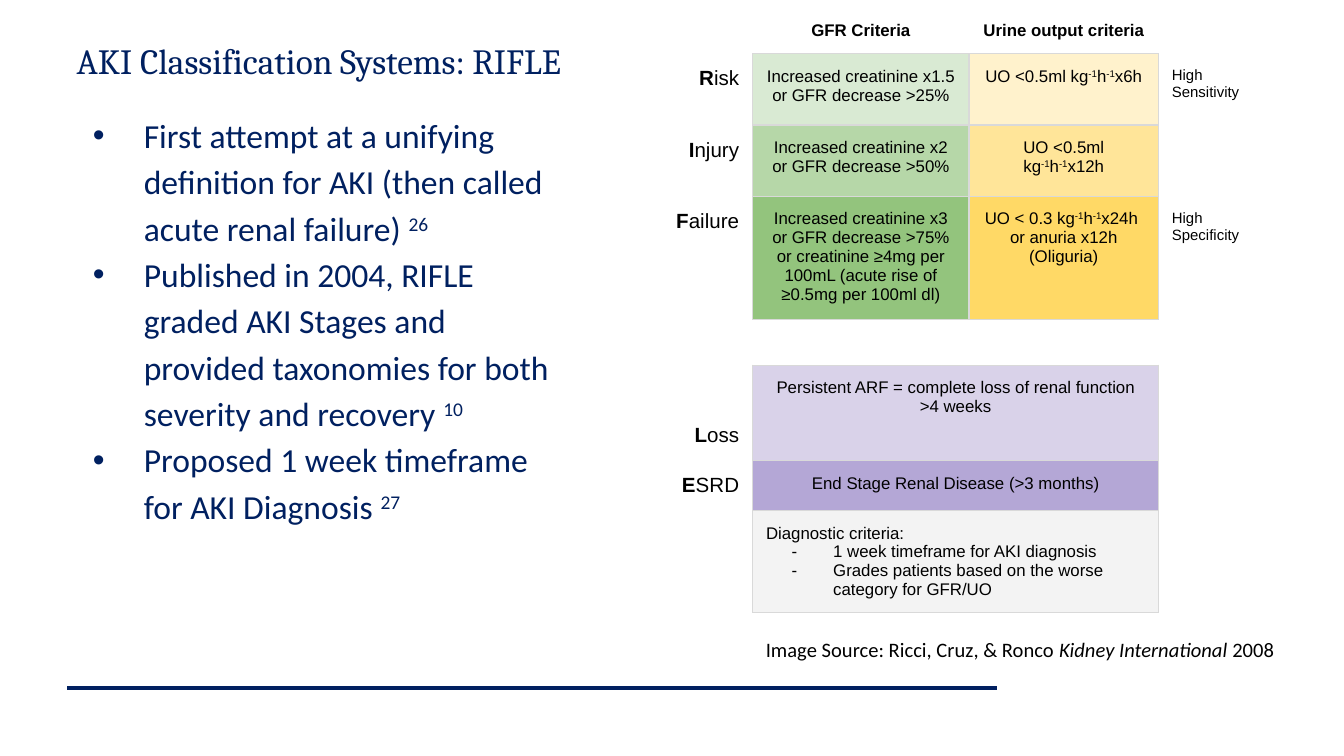
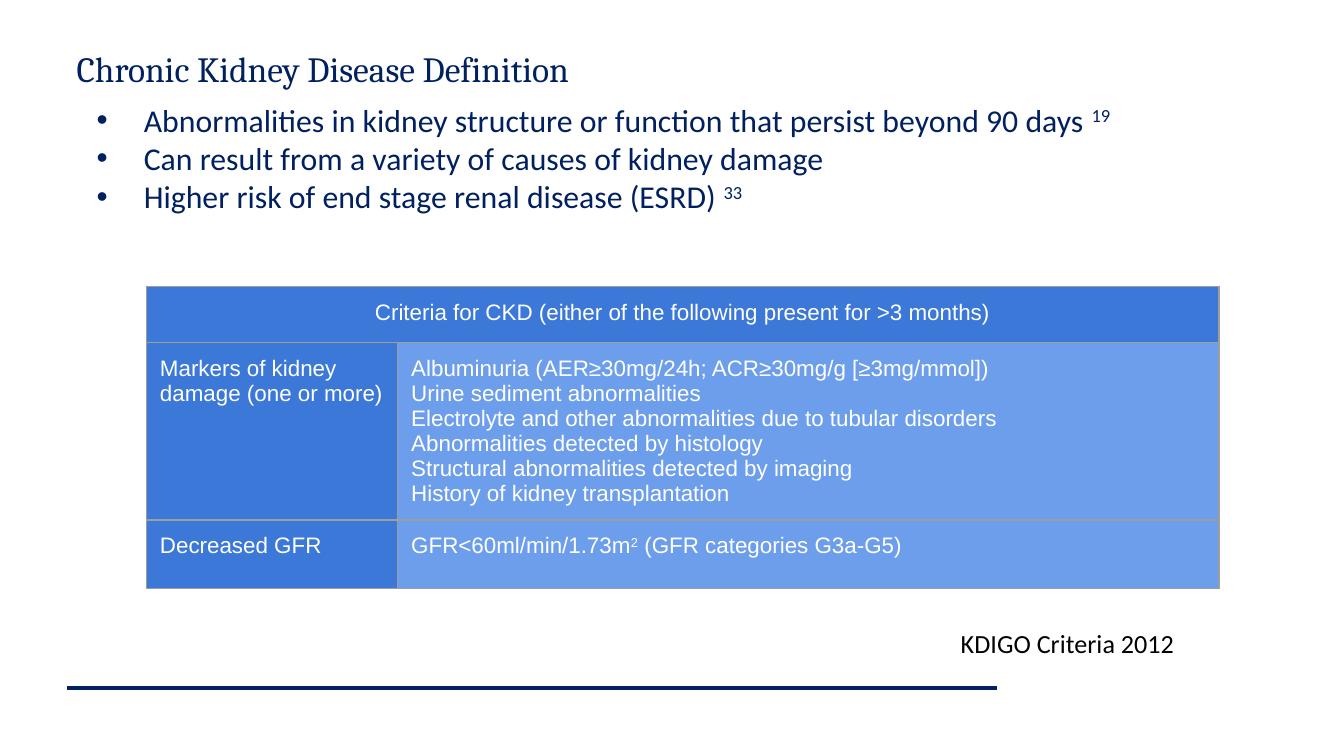
from itertools import product

from lxml.etree import SubElement
from pptx import Presentation
from pptx.dml.color import RGBColor as Color
from pptx.enum.shapes import MSO_CONNECTOR as Connector
from pptx.enum.text import MSO_ANCHOR as Anchor, MSO_AUTO_SIZE as AutoSize, PP_ALIGN as Align
from pptx.oxml.ns import qn
from pptx.util import Inches, Pt

NAVY = Color(0x00, 0x20, 0x60)
BLACK = Color(0x00, 0x00, 0x00)
WHITE = Color(0xFF, 0xFF, 0xFF)
LIGHT_GRAY = Color(0xD9, 0xD9, 0xD9)
MID_GRAY = Color(0x9E, 0x9E, 0x9E)
PALE_GRAY = Color(0xF3, 0xF3, 0xF3)
GREENS = [Color(0xD9, 0xEA, 0xD3), Color(0xB6, 0xD7, 0xA8), Color(0x93, 0xC4, 0x7D)]
GOLDS = [Color(0xFF, 0xF2, 0xCC), Color(0xFF, 0xE5, 0x99), Color(0xFF, 0xD9, 0x66)]
LILAC = Color(0xD9, 0xD2, 0xE9)
PURPLE = Color(0xB4, 0xA7, 0xD6)
BLUE = Color(0x3C, 0x78, 0xD8)
SKY = Color(0x6D, 0x9E, 0xEB)

TITLE_FONT, BODY_FONT, TABLE_FONT = "Cambria", "Calibri", "Arial"
PLAIN_TABLE_STYLE = "{2D5ABB26-0587-4C30-8999-92F81FD0307C}"


def add_bullet(para, mark, color, indent, hanging):
    """Give a paragraph a coloured bullet and a hanging indent."""
    props = para._p.get_or_add_pPr()
    props.set("marL", str(Inches(indent)))
    props.set("indent", str(-Inches(hanging)))
    tint = SubElement(props, qn("a:buClr"))
    SubElement(tint, qn("a:srgbClr")).set("val", str(color))
    SubElement(props, qn("a:buFont")).set("typeface", "Arial")
    SubElement(props, qn("a:buChar")).set("char", mark)


def write_text(frame, paras, *, size, font, color, align=Align.LEFT, bold=False,
               spacing=None, bullet=None, indent=0.5, hanging=0.35, first_bullet=0):
    """Fill a frame; a paragraph is a string or a list of strings and (text, style) pairs."""
    for index, spans in enumerate(paras):
        para = frame.paragraphs[0] if index == 0 else frame.add_paragraph()
        para.alignment = align
        para.space_before = Pt(0)
        if spacing:
            para.line_spacing = spacing
        if bullet and index >= first_bullet:
            add_bullet(para, bullet, color, indent, hanging)
        for item in [spans] if isinstance(spans, str) else spans:
            text, style = (item, "") if isinstance(item, str) else item
            span = para.add_run()
            span.text = text
            span.font.size = Pt(size)
            span.font.name = font
            span.font.color.rgb = color
            span.font.bold = bold or style == "bold"
            span.font.italic = style == "italic"
            if style == "super":
                span._r.get_or_add_rPr().set("baseline", "30000")


def set_frame(frame, inset_x, inset_y, anchor=Anchor.TOP):
    """Set the insets, wrapping and anchor of a text frame."""
    frame.word_wrap = True
    frame.auto_size = AutoSize.NONE
    frame.vertical_anchor = anchor
    frame.margin_left = frame.margin_right = Inches(inset_x)
    frame.margin_top = frame.margin_bottom = Inches(inset_y)


def add_text(page, box, paras, *, inset=(0.1, 0.1), anchor=Anchor.TOP, **style):
    """Add a text box at box (left, top, width, height)."""
    frame = page.shapes.add_textbox(*map(Inches, box)).text_frame
    set_frame(frame, *inset, anchor)
    write_text(frame, paras, **style)


def add_page(deck, title, top):
    """Add a slide with its title and the footer rule."""
    page = deck.slides.add_slide(deck.slide_layouts[5])
    heading = page.shapes.title
    heading.left, heading.top, heading.width, heading.height = map(Inches, (0.5, top, 9, 0.39))
    set_frame(heading.text_frame, 0.07, 0.04, Anchor.BOTTOM)
    write_text(heading.text_frame, [title], size=19, font=TITLE_FONT, color=NAVY)
    rule = page.shapes.add_connector(
        Connector.STRAIGHT, Inches(0.5), Inches(5.12), Inches(7.42), Inches(5.12))
    rule.line.color.rgb = NAVY
    rule.line.width = Pt(2)
    SubElement(rule._element.spPr, qn("a:effectLst"))
    return page


def add_bullets(page, box, paras, **style):
    """Add the bulleted body text of a slide."""
    add_text(page, box, paras, inset=(0.07, 0.04), font=BODY_FONT, color=NAVY,
             bullet="•", **style)


def add_grid(page, left, top, widths, heights):
    """Add an unstyled table with the given column widths and row heights."""
    frame = page.shapes.add_table(len(heights), len(widths), Inches(left), Inches(top),
                                  Inches(sum(widths)), Inches(sum(heights)))
    table = frame.table
    table.first_row = table.horz_banding = False
    table._tbl.tblPr.find(qn("a:tableStyleId")).text = PLAIN_TABLE_STYLE
    for column, width in zip(table.columns, widths):
        column.width = Inches(width)
    for row, height in zip(table.rows, heights):
        row.height = Inches(height)
    for cell in table.iter_cells():
        cell.margin_left = cell.margin_right = Inches(0.1)
        cell.margin_top = cell.margin_bottom = Inches(0.1)
        end = SubElement(cell.text_frame.paragraphs[0]._p, qn("a:endParaRPr"))
        end.set("sz", "800")
    return table


def draw_borders(cell, color):
    """Draw a thin line on all four sides of a cell."""
    props = cell._tc.get_or_add_tcPr()
    for side in ("lnL", "lnR", "lnT", "lnB"):
        line = SubElement(props, qn(f"a:{side}"), w=str(Pt(0.75)))
        fill = SubElement(line, qn("a:solidFill"))
        SubElement(fill, qn("a:srgbClr"), val=str(color))


def fill_block(table, row, column, paras, *, fill, border, rows=1, columns=1, **style):
    """Fill a cell, merged over the given rows and columns, with colour and text."""
    origin = table.cell(row, column)
    if rows * columns > 1:
        origin.merge(table.cell(row + rows - 1, column + columns - 1))
    for down, across in product(range(rows), range(columns)):
        cell = table.cell(row + down, column + across)
        draw_borders(cell, border)
        cell.fill.solid()
        cell.fill.fore_color.rgb = fill
    write_text(origin.text_frame, paras, font=TABLE_FONT, **style)


def write_label(table, row, column, spans, **style):
    """Write text in an unfilled cell."""
    write_text(table.cell(row, column).text_frame, [spans],
               font=TABLE_FONT, color=BLACK, **style)


def urine_rate(start, end):
    """Return the spans of a urine output rate per kilogram and hour."""
    return [f"{start} kg", ("-1", "super"), "h", ("-1", "super"), end]


def add_rifle_table(page, left, top):
    """Add the table of RIFLE stages, outcomes and diagnostic criteria."""
    table = add_grid(page, left, top, [0.67, 1.61, 1.41, 0.88],
                     [0.34, 0.53, 0.53, 0.92, 0.33, 0.34, 0.37, 0.37, 0.76])
    block = dict(border=LIGHT_GRAY, size=9, color=BLACK)
    centered = dict(block, align=Align.CENTER)
    for column, heading in enumerate(["GFR Criteria", "Urine output criteria"], 1):
        table.cell(0, column).vertical_anchor = Anchor.BOTTOM
        write_label(table, 0, column, heading, size=9, bold=True, align=Align.CENTER)

    stages = [
        ("Increased creatinine x1.5 or GFR decrease >25%",
         [urine_rate("UO <0.5ml", "x6h")], "High Sensitivity"),
        ("Increased creatinine x2 or GFR decrease >50%",
         [urine_rate("UO <0.5ml", "x12h")], ""),
        ("Increased creatinine x3 or GFR decrease >75% or creatinine ≥4mg per 100mL "
         "(acute rise of ≥0.5mg per 100ml dl)",
         [urine_rate("UO < 0.3", "x24h "), "or anuria x12h", "(Oliguria)"],
         "High Specificity"),
    ]
    for row, (filtration, urine, note) in enumerate(stages, 1):
        fill_block(table, row, 1, [filtration], fill=GREENS[row - 1], **centered)
        fill_block(table, row, 2, urine, fill=GOLDS[row - 1], **centered)
        if note:
            write_label(table, row, 3, note, size=8)

    for row, name in {1: "Risk", 2: "Injury", 3: "Failure", 6: "Loss", 7: "ESRD"}.items():
        write_label(table, row, 0, [(name[0], "bold"), name[1:]], size=11, align=Align.RIGHT)

    table.cell(4, 1).merge(table.cell(4, 2))
    fill_block(table, 5, 1, ["Persistent ARF = complete loss of renal function >4 weeks"],
               fill=LILAC, rows=2, columns=2, **centered)
    fill_block(table, 7, 1, ["End Stage Renal Disease (>3 months)"],
               fill=PURPLE, columns=2, **centered)
    fill_block(table, 8, 1, ["Diagnostic criteria:", "1 week timeframe for AKI diagnosis",
                             "Grades patients based on the worse category for GFR/UO"],
               fill=PALE_GRAY, columns=2, bullet="-", hanging=0.31, first_bullet=1, **block)


def add_ckd_table(page, left, top):
    """Add the table of criteria for chronic kidney disease."""
    table = add_grid(page, left, top, [1.87, 6.11], [0.42, 1.32, 0.51])
    block = dict(border=MID_GRAY, size=12, color=WHITE)
    fill_block(table, 0, 0, ["Criteria for CKD (either of the following present for >3 months)"],
               fill=BLUE, columns=2, align=Align.CENTER, **block)
    criteria = [
        ("Markers of kidney damage (one or more)",
         ["Albuminuria (AER≥30mg/24h; ACR≥30mg/g [≥3mg/mmol])",
          "Urine sediment abnormalities",
          "Electrolyte and other abnormalities due to tubular disorders",
          "Abnormalities detected by histology",
          "Structural abnormalities detected by imaging",
          "History of kidney transplantation"]),
        ("Decreased GFR",
         [["GFR<60ml/min/1.73m", ("2", "super"), " (GFR categories G3a-G5)"]]),
    ]
    for row, (name, details) in enumerate(criteria, 1):
        fill_block(table, row, 0, [name], fill=BLUE, **block)
        fill_block(table, row, 1, details, fill=SKY, **block)


def build_rifle_page(deck):
    """Build the slide on the RIFLE classification."""
    page = add_page(deck, "AKI Classification Systems: RIFLE", 0.26)
    add_bullets(page, (0.5, 0.77, 3.79, 4.29), [
        ["First attempt at a unifying definition for AKI (then called acute renal failure) ",
         ("26", "super")],
        ["Published in 2004, RIFLE graded AKI Stages and provided taxonomies for both "
         "severity and recovery ", ("10", "super")],
        ["Proposed 1 week timeframe for AKI Diagnosis ", ("27", "super")],
    ], size=18, spacing=1.15, hanging=0.38)
    add_text(page, (5.6, 4.71, 4.2, 0.24),
             [["Image Source: Ricci, Cruz, & Ronco ", ("Kidney International", "italic"), " 2008"]],
             anchor=Anchor.MIDDLE, size=11, font=BODY_FONT, color=BLACK)
    add_rifle_table(page, 4.93, 0.06)


def build_ckd_page(deck):
    """Build the slide that defines chronic kidney disease."""
    page = add_page(deck, "Chronic Kidney Disease Definition", 0.32)
    add_bullets(page, (0.5, 0.71, 9, 4.36), [
        ["Abnormalities in kidney structure or function that persist beyond 90 days ",
         ("19", "super")],
        "Can result from a variety of causes of kidney damage",
        ["Higher risk of end stage renal disease (ESRD) ", ("33", "super")],
    ], size=17)
    add_text(page, (7.05, 4.57, 2.08, 0.3), ["KDIGO Criteria 2012"],
             size=14, font=BODY_FONT, color=BLACK)
    add_ckd_table(page, 1.09, 2.13)


def main():
    """Build and save the deck."""
    deck = Presentation()
    deck.slide_width = Inches(10)
    deck.slide_height = deck.slide_width * 9 // 16
    build_rifle_page(deck)
    build_ckd_page(deck)
    deck.save("out.pptx")


if __name__ == "__main__":
    main()
